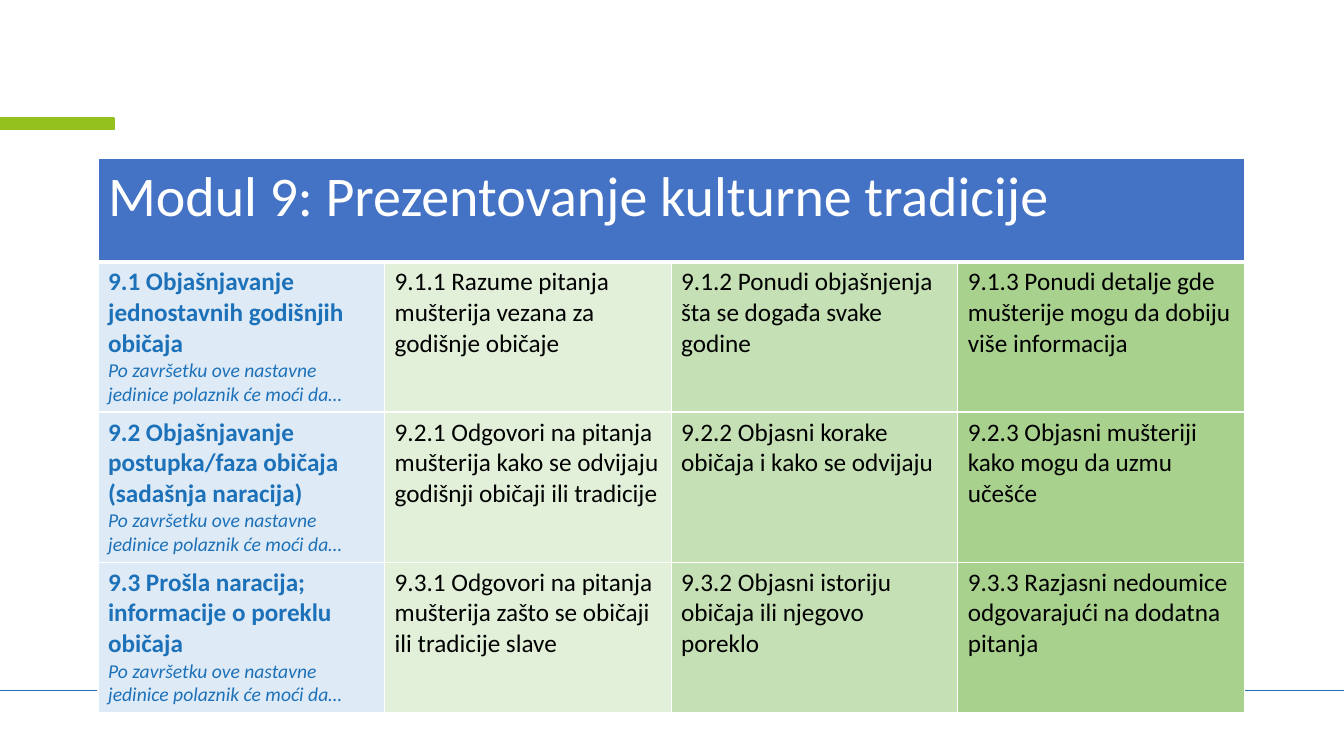
"""Build the slide with the outcomes table of module 9."""
from lxml.etree import SubElement
from pptx import Presentation
from pptx.dml.color import RGBColor
from pptx.enum.shapes import MSO_CONNECTOR as Connector, MSO_SHAPE as Shape
from pptx.oxml.ns import qn
from pptx.util import Cm, Pt

TITLE = "Modul 9: Prezentovanje kulturne tradicije"
OUTCOME_LEAD = "Po završetku ove nastavne jedinice polaznik će moći da…"
UNITS = [
    ("9.1 Objašnjavanje jednostavnih godišnjih običaja",
     "9.1.1 Razume pitanja mušterija vezana za godišnje običaje",
     "9.1.2 Ponudi objašnjenja šta se događa svake godine",
     "9.1.3 Ponudi detalje gde mušterije mogu da dobiju više informacija"),
    ("9.2 Objašnjavanje postupka/faza običaja (sadašnja naracija)",
     "9.2.1 Odgovori na pitanja mušterija kako se odvijaju godišnji običaji ili tradicije",
     "9.2.2 Objasni korake običaja i kako se odvijaju",
     "9.2.3 Objasni mušteriji kako mogu da uzmu učešće"),
    ("9.3 Prošla naracija; informacije o poreklu običaja",
     "9.3.1 Odgovori na pitanja mušterija zašto se običaji ili tradicije slave",
     "9.3.2 Objasni istoriju običaja ili njegovo poreklo",
     "9.3.3 Razjasni nedoumice odgovarajući na dodatna pitanja"),
]

FONT = "Calibri"
WHITE = RGBColor(0xFF, 0xFF, 0xFF)
BLACK = RGBColor(0x00, 0x00, 0x00)
BLUE = RGBColor(0x1D, 0x71, 0xB8)
LIME = RGBColor(0x95, 0xC1, 0x1F)
HEADER_FILL = RGBColor(0x44, 0x72, 0xC4)
COLUMN_FILLS = [RGBColor(0xDE, 0xEB, 0xF7), RGBColor(0xE2, 0xF0, 0xD9),
                RGBColor(0xC5, 0xE0, 0xB4), RGBColor(0xA9, 0xD1, 0x8E)]

SLIDE_WIDTH, SLIDE_HEIGHT = Cm(33.87), Cm(19.05)
TABLE_LEFT, TABLE_TOP, TABLE_WIDTH = Cm(2.47), Cm(3.99), Cm(28.89)
HEADER_HEIGHT, UNIT_HEIGHT = Cm(2.61), Cm(3.78)
FOOTER_Y = Cm(17.4)


def add_run(paragraph, text, size, color, bold=False, italic=False):
    run = paragraph.add_run()
    run.text = text
    font = run.font
    font.name, font.size, font.bold, font.italic = FONT, Pt(size), bold, italic
    font.color.rgb = color


def style_cell(cell, fill, top=1, bottom=1):
    properties = cell._tc.get_or_add_tcPr()
    for side, points in (("L", 1), ("R", 1), ("T", top), ("B", bottom)):
        line = SubElement(properties, qn(f"a:ln{side}"), w=str(Pt(points)))
        SubElement(SubElement(line, qn("a:solidFill")), qn("a:srgbClr"), val=str(WHITE))
    cell.fill.solid()
    cell.fill.fore_color.rgb = fill


def add_master_marks(slide):
    footer = slide.shapes.add_connector(Connector.STRAIGHT, 0, FOOTER_Y, SLIDE_WIDTH, FOOTER_Y)
    footer.line.color.rgb = BLUE
    footer.line.width = Pt(1)
    SubElement(footer._element.spPr, qn("a:effectLst"))
    accent = slide.shapes.add_shape(Shape.RECTANGLE, 0, Cm(2.97), Cm(2.87), Cm(0.3))
    accent.shadow.inherit = False
    accent.fill.solid()
    accent.fill.fore_color.rgb = LIME
    accent.line.color.rgb = LIME
    accent.line.width = Pt(1)


def add_module_table(slide):
    columns = len(COLUMN_FILLS)
    height = HEADER_HEIGHT + UNIT_HEIGHT * len(UNITS)
    table = slide.shapes.add_table(len(UNITS) + 1, columns, TABLE_LEFT, TABLE_TOP,
                                   TABLE_WIDTH, height).table
    for column in table.columns:
        column.width = TABLE_WIDTH // columns
    for index, row in enumerate(table.rows):
        row.height = UNIT_HEIGHT if index else HEADER_HEIGHT

    for column in range(columns):
        style_cell(table.cell(0, column), HEADER_FILL, bottom=3)
    header = table.cell(0, 0)
    header.merge(table.cell(0, columns - 1))
    add_run(header.text_frame.paragraphs[0], TITLE, 40, WHITE)

    for row, unit in enumerate(UNITS, 1):
        for column, text in enumerate(unit):
            cell = table.cell(row, column)
            style_cell(cell, COLUMN_FILLS[column], top=3 if row == 1 else 1)
            frame = cell.text_frame
            is_unit_name = column == 0
            add_run(frame.paragraphs[0], text, 18, BLUE if is_unit_name else BLACK,
                    bold=is_unit_name)
            if is_unit_name:
                add_run(frame.add_paragraph(), OUTCOME_LEAD, 14, BLUE, italic=True)


def main():
    presentation = Presentation()
    presentation.slide_width, presentation.slide_height = SLIDE_WIDTH, SLIDE_HEIGHT
    slide = presentation.slides.add_slide(presentation.slide_layouts[6])
    add_master_marks(slide)
    add_module_table(slide)
    presentation.save("out.pptx")


if __name__ == "__main__":
    main()
